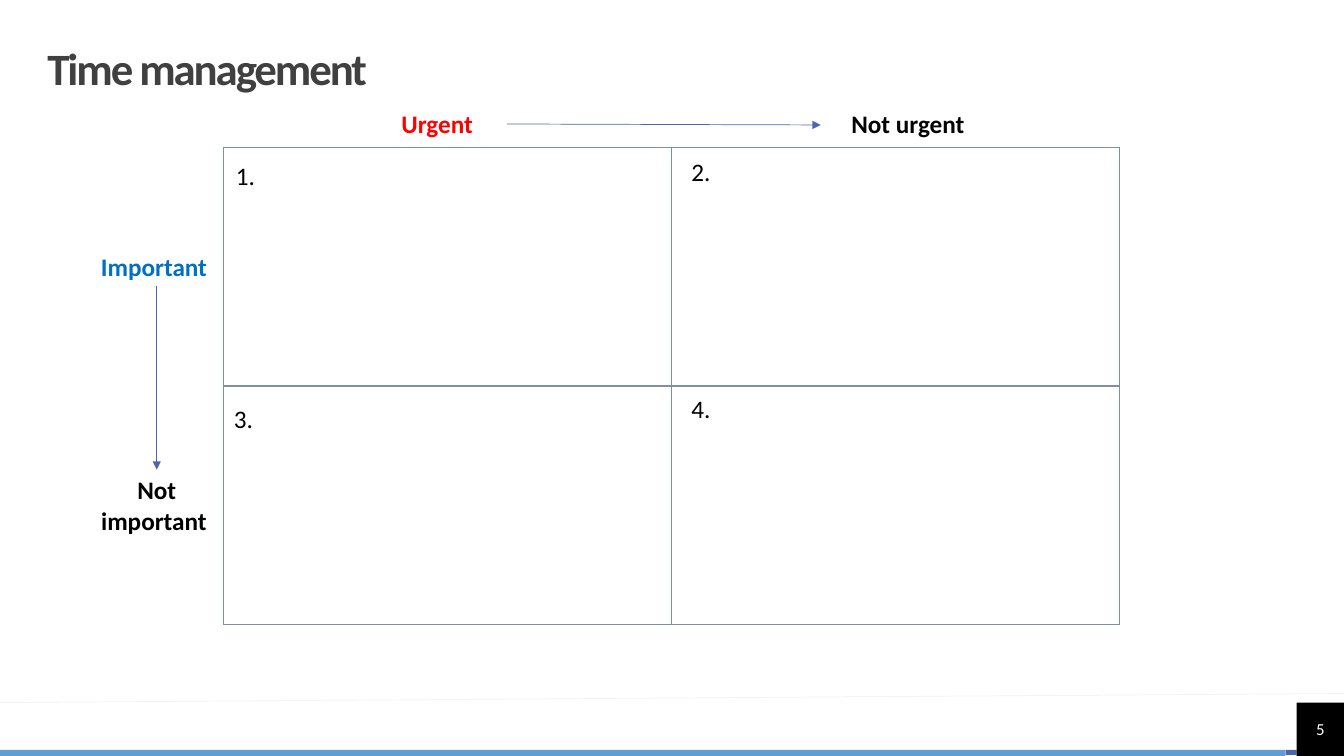
from lxml.etree import SubElement
from pptx import Presentation
from pptx.dml.color import RGBColor
from pptx.enum.shapes import MSO_CONNECTOR, MSO_SHAPE
from pptx.enum.text import MSO_ANCHOR, MSO_AUTO_SIZE, PP_ALIGN
from pptx.oxml.ns import qn
from pptx.util import Emu, Pt

PX = 9144  # EMU per px, at 100 px to the inch
FONT = "Calibri"
BLACK, WHITE, NAVY, SKY = "000000", "FFFFFF", "4A66AC", "629DD1"
BORDER = "7F8FA9"
TOP, BOTTOM, RIGHT = 0, 2, 3  # connection sites


def px(*lengths):
    return [Emu(length * PX) for length in lengths]


def rgb(value):
    return RGBColor.from_string(value)


def write(frame, text, size, color, bold=False, align=PP_ALIGN.LEFT):
    paragraph = frame.paragraphs[0]
    paragraph.alignment = align
    run = paragraph.add_run()
    run.text = text
    format_values = {"name": FONT, "size": Pt(size), "bold": bold}
    for name, value in format_values.items():
        setattr(run.font, name, value)
    run.font.color.rgb = rgb(color)
    return run


def clear_margins(frame):
    for side in ("left", "top", "right", "bottom"):
        setattr(frame, f"margin_{side}", 0)
    frame.vertical_anchor = MSO_ANCHOR.MIDDLE
    frame.word_wrap = True


def add_title(slide, text):
    title = slide.shapes.title
    title.left, title.top, title.width, title.height = px(47, 47, 1239, 47)
    clear_margins(title.text_frame)
    run = write(title.text_frame, text, 32, "404040", bold=True)
    run.font._element.set("spc", "-150")
    title.text_frame.paragraphs[0].line_spacing = 0.9


def add_block(slide, box, color):
    block = slide.shapes.add_shape(MSO_SHAPE.RECTANGLE, *px(*box))
    block.shadow.inherit = False
    block.fill.solid()
    block.fill.fore_color.rgb = rgb(color)
    block.line.fill.background()
    return block


def add_label(slide, box, text, color=BLACK, wrap=True, **style):
    label = slide.shapes.add_textbox(*px(*box))
    label.text_frame.word_wrap = wrap
    label.text_frame.auto_size = MSO_AUTO_SIZE.SHAPE_TO_FIT_TEXT
    write(label.text_frame, text, 18, color, **style)
    return label


def add_line(slide, ends, color, arrow=False):
    line = slide.shapes.add_connector(MSO_CONNECTOR.STRAIGHT, *px(*ends))
    line.line.color.rgb = rgb(color)
    line.line.width = Pt(0.5)
    if arrow:
        SubElement(line.line._get_or_add_ln(), qn("a:tailEnd"), type="triangle")
    SubElement(line._element.spPr, qn("a:effectLst"))
    return line


def outline_cell(cell):
    """Give the cell thin borders and no fill."""
    properties = cell._tc.get_or_add_tcPr()
    for side in ("lnL", "lnR", "lnT", "lnB"):
        border = SubElement(properties, qn(f"a:{side}"), w=str(Pt(1)))
        fill = SubElement(border, qn("a:solidFill"))
        SubElement(fill, qn("a:srgbClr"), val=BORDER)
    cell.fill.background()


def add_matrix(slide):
    matrix = slide.shapes.add_table(2, 2, *px(222, 146, 888, 474)).table
    matrix.first_row = matrix.horz_banding = False
    for cell in matrix.iter_cells():
        outline_cell(cell)


def add_footer(slide):
    add_block(slide, (0, 744, 1275, 6), SKY)
    add_block(slide, (1275, 744, 11, 5), NAVY)
    add_line(slide, (1333, 688, 0, 697), "F2F2F2")
    page = add_block(slide, (1286, 697, 47, 53), BLACK)
    clear_margins(page.text_frame)
    write(page.text_frame, "5", 12, WHITE, align=PP_ALIGN.CENTER)


def add_axes(slide):
    heading = {"bold": True, "align": PP_ALIGN.CENTER}
    urgent = add_label(slide, (364, 103, 139, 40), "Urgent", "FF0000", **heading)
    add_label(slide, (831, 103, 139, 40), "Not urgent", **heading)
    important = add_label(slide, (86, 244, 139, 40), "Important ", "0070C0", **heading)
    unimportant = add_label(slide, (86, 466, 139, 71), "Not important ", **heading)

    across = add_line(slide, (503, 123, 814, 124), NAVY, arrow=True)
    across.begin_connect(urgent, RIGHT)
    down = add_line(slide, (155, 284, 155, 466), NAVY, arrow=True)
    down.begin_connect(important, BOTTOM)
    down.end_connect(unimportant, TOP)


def main():
    deck = Presentation()
    deck.slide_width, deck.slide_height = px(1333, 750)
    slide = deck.slides.add_slide(deck.slide_layouts[5])

    add_footer(slide)
    add_title(slide, "Time management")
    add_matrix(slide)
    add_axes(slide)
    corners = [(224, 154), (676, 150), (222, 395), (676, 385)]
    for number, (left, top) in enumerate(corners, 1):
        add_label(slide, (left, top, 45, 40), f"{number}.", wrap=False)

    deck.save("out.pptx")


if __name__ == "__main__":
    main()
